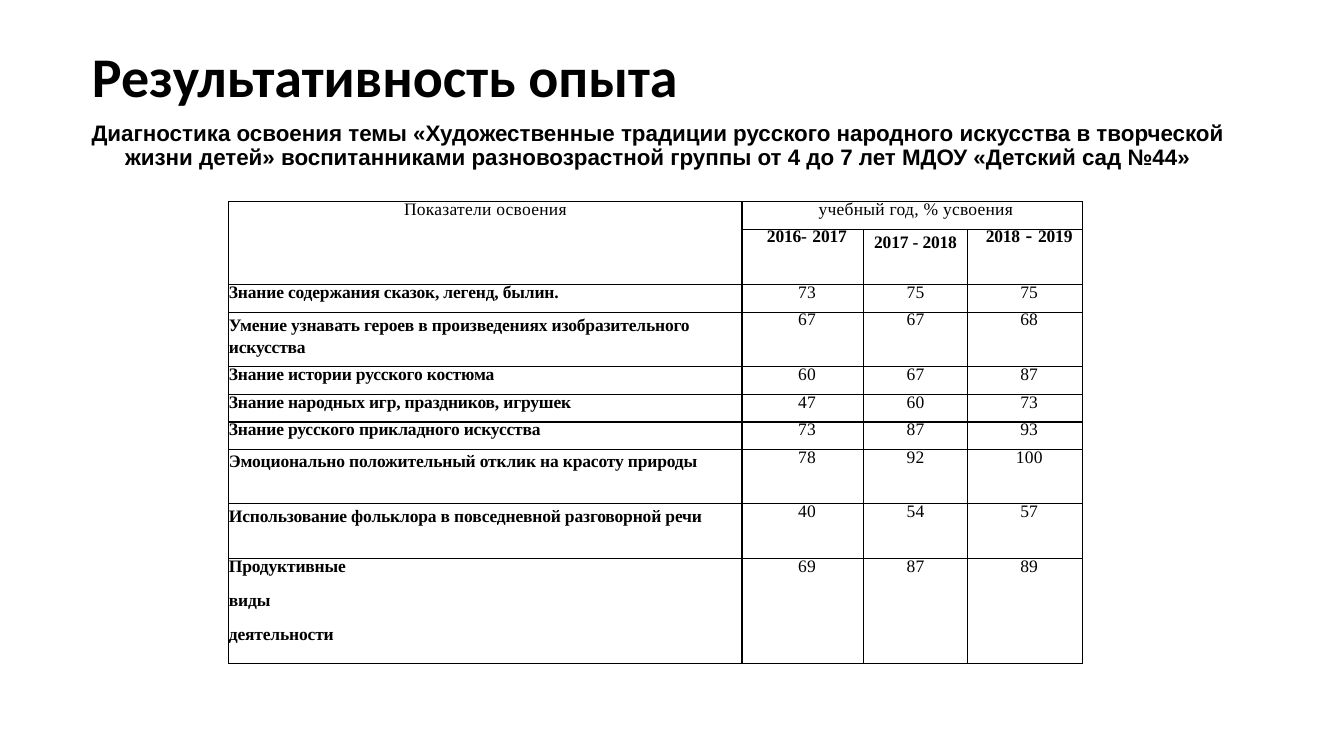
from dataclasses import dataclass

from lxml.etree import SubElement
from pptx import Presentation
from pptx.dml.color import RGBColor
from pptx.enum.text import MSO_ANCHOR as Anchor, PP_ALIGN as Align
from pptx.oxml.ns import qn
from pptx.util import Pt


@dataclass(frozen=True)
class Theme:
    ink: str = "000000"
    paper: str = "FFFFFF"
    title_font: str = "Calibri"
    heading_font: str = "Arial"
    table_font: str = "Times New Roman"
    title_size: float = 40
    heading_size: float = 16
    cell_size: float = 12.5
    dash_size: float = 14.5
    tight: float = -0.1
    loose: float = 0.2
    border: float = 1


THEME = Theme()

TITLE = "Результативность опыта"
HEADING = (
    "Диагностика освоения темы «Художественные традиции русского народного искусства "
    "в творческой жизни детей» воспитанниками разновозрастной группы от 4 до 7 лет "
    "МДОУ «Детский сад №44»"
)

COLUMN_WIDTHS = (366.5, 87, 74, 82.5)
ROW_HEIGHTS = (20, 39.5, 19.5, 39, 20, 19.5, 19.5, 39, 39, 75)
VALUE_INDENTS = (5.76, 0, 5.76)
LINE = 12.5

# Each year: spans of text, line spacing, space after
YEARS = (
    (("2016-", " ", "2017"), LINE, 3),
    (("2017 - 2018",), 16.2, 0),
    (("2018", " - ", "2019"), LINE, 3),
)

# Each indicator: label, label line spacing, values by year
INDICATORS = (
    ("Знание содержания сказок, легенд, былин.", LINE, (73, 75, 75)),
    ("Умение узнавать героев в произведениях изобразительного искусства", 16.2, (67, 67, 68)),
    ("Знание истории русского костюма", LINE, (60, 67, 87)),
    ("Знание народных игр, праздников, игрушек", LINE, (47, 60, 73)),
    ("Знание русского прикладного искусства", LINE, (73, 87, 93)),
    ("Эмоционально положительный отклик на красоту природы", 15.9, (78, 92, 100)),
    ("Использование фольклора в повседневной разговорной речи", 16.2, (40, 54, 57)),
    ("Продуктивные\nвиды\nдеятельности", LINE, (69, 87, 89)),
)


def style_span(span, font, size, bold, tracking=0):
    span.font.name = font
    span.font.size = Pt(size)
    span.font.bold = bold
    span.font.color.rgb = RGBColor.from_string(THEME.ink)
    if tracking:
        span._r.get_or_add_rPr().set("spc", str(round(tracking * 100)))


def add_text(page, frame, text, font, size, align, anchor, before=0):
    box = page.shapes.add_textbox(*map(Pt, frame))
    box.text_frame.word_wrap = True
    box.text_frame.vertical_anchor = anchor
    box.text_frame.text = text
    para = box.text_frame.paragraphs[0]
    para.alignment = align
    para.line_spacing = 0.9
    para.space_before = Pt(before)
    style_span(para.runs[0], font, size, True)


def style_cell(cell):
    cell.margin_left = cell.margin_right = cell.margin_top = cell.margin_bottom = 0
    properties = cell._tc.get_or_add_tcPr()
    for side in ("lnL", "lnR", "lnT", "lnB"):
        line = SubElement(properties, qn(f"a:{side}"), w=str(Pt(THEME.border)))
        paint = SubElement(line, qn("a:solidFill"))
        SubElement(paint, qn("a:srgbClr"), val=THEME.ink)
    cell.fill.solid()
    cell.fill.fore_color.rgb = RGBColor.from_string(THEME.paper)


def style_para(para, align, line=LINE, indent=0, after=0):
    para.alignment = align
    para.line_spacing = Pt(line)
    para.space_after = Pt(after)
    if indent:
        para._p.get_or_add_pPr().set("marL", str(Pt(indent)))


def write_plain(cell, text, indent=0):
    cell.text_frame.text = text
    para = cell.text_frame.paragraphs[0]
    style_para(para, Align.CENTER, indent=indent)
    style_span(para.runs[0], THEME.table_font, THEME.cell_size, False, THEME.loose)


def write_year(cell, parts, line, indent, after):
    para = cell.text_frame.paragraphs[0]
    style_para(para, Align.CENTER, line, indent, after)
    for index, part in enumerate(parts):
        span = para.add_run()
        span.text = part
        is_gap = index == 1
        size = THEME.dash_size if is_gap else THEME.cell_size
        tracking = THEME.loose if is_gap else THEME.tight
        style_span(span, THEME.table_font, size, True, tracking)


def write_label(cell, text, line):
    cell.text_frame.text = text
    paras = cell.text_frame.paragraphs
    for index, para in enumerate(paras):
        is_last = index == len(paras) - 1
        style_para(para, Align.LEFT, line, after=0 if is_last else 6)
        para.space_before = Pt(6 if index else 0)
        style_span(para.runs[0], THEME.table_font, THEME.cell_size, True, THEME.tight)


def add_results(page):
    frame = (163.5, 144, sum(COLUMN_WIDTHS), sum(ROW_HEIGHTS))
    table = page.shapes.add_table(
        len(ROW_HEIGHTS), len(COLUMN_WIDTHS), *map(Pt, frame)
    ).table
    table.first_row = table.horz_banding = False
    for column, width in zip(table.columns, COLUMN_WIDTHS):
        column.width = Pt(width)
    for row, height in zip(table.rows, ROW_HEIGHTS):
        row.height = Pt(height)
    for cell in table.iter_cells():
        style_cell(cell)

    # Two-level header
    table.cell(0, 0).merge(table.cell(1, 0))
    table.cell(0, 1).merge(table.cell(0, 3))
    write_plain(table.cell(0, 0), "Показатели освоения")
    write_plain(table.cell(0, 1), "учебный год, % усвоения", indent=5)
    for column, ((parts, line, after), indent) in enumerate(zip(YEARS, VALUE_INDENTS), 1):
        write_year(table.cell(1, column), parts, line, indent, after)

    # Indicators and their values
    for row, (label, line, values) in enumerate(INDICATORS, 2):
        write_label(table.cell(row, 0), label, line)
        for column, (value, indent) in enumerate(zip(values, VALUE_INDENTS), 1):
            write_plain(table.cell(row, column), str(value), indent)


def main():
    deck = Presentation()
    deck.slide_width, deck.slide_height = Pt(960), Pt(540)
    page = deck.slides.add_slide(deck.slide_layouts[6])

    # Title and heading
    add_text(page, (58.5, 29, 828, 56), TITLE, THEME.title_font, THEME.title_size,
             Align.LEFT, Anchor.MIDDLE)
    add_text(page, (56, 83.5, 828, 412), HEADING, THEME.heading_font, THEME.heading_size,
             Align.CENTER, Anchor.TOP, before=10)

    # Results by school year
    add_results(page)
    deck.save("out.pptx")


if __name__ == "__main__":
    main()
